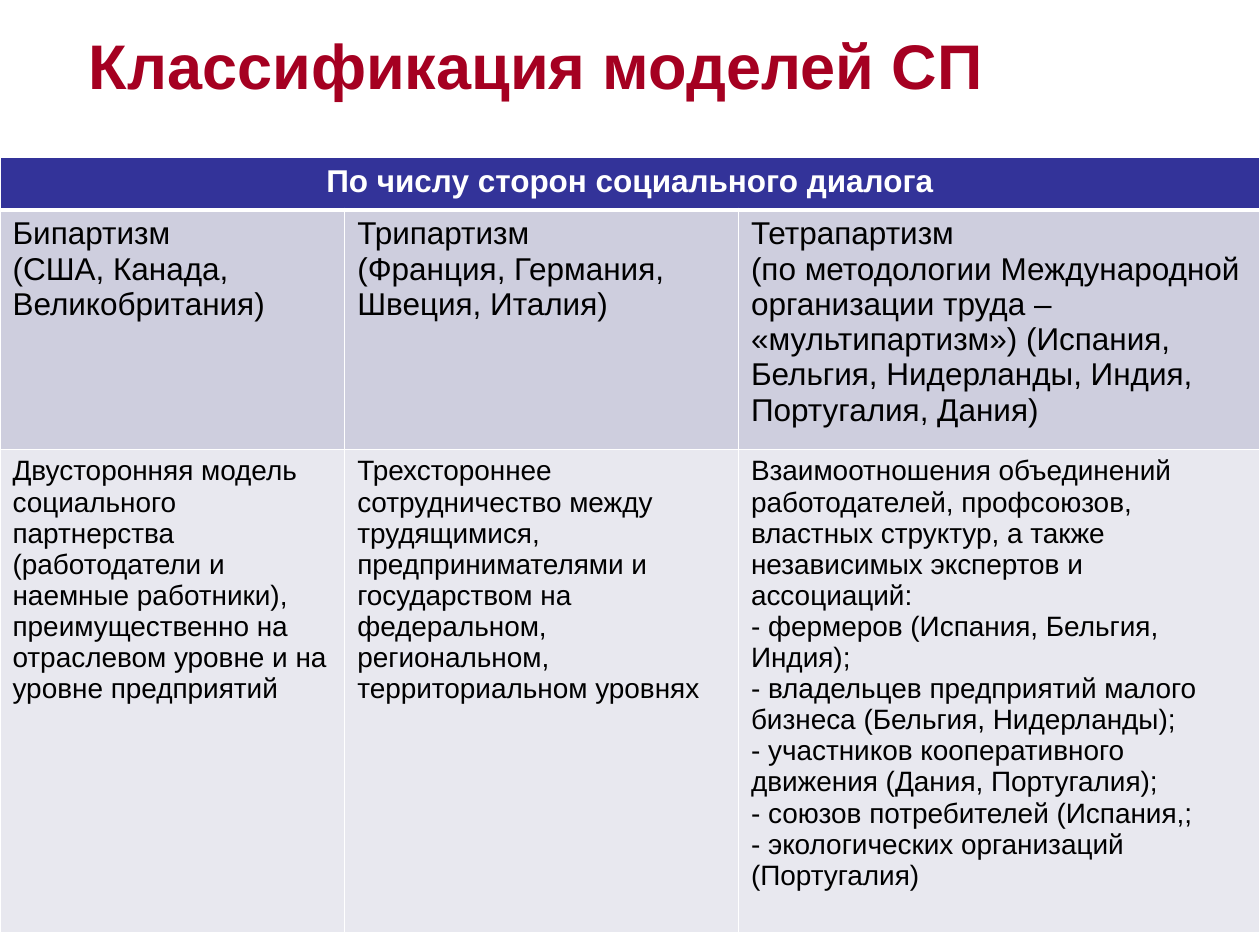
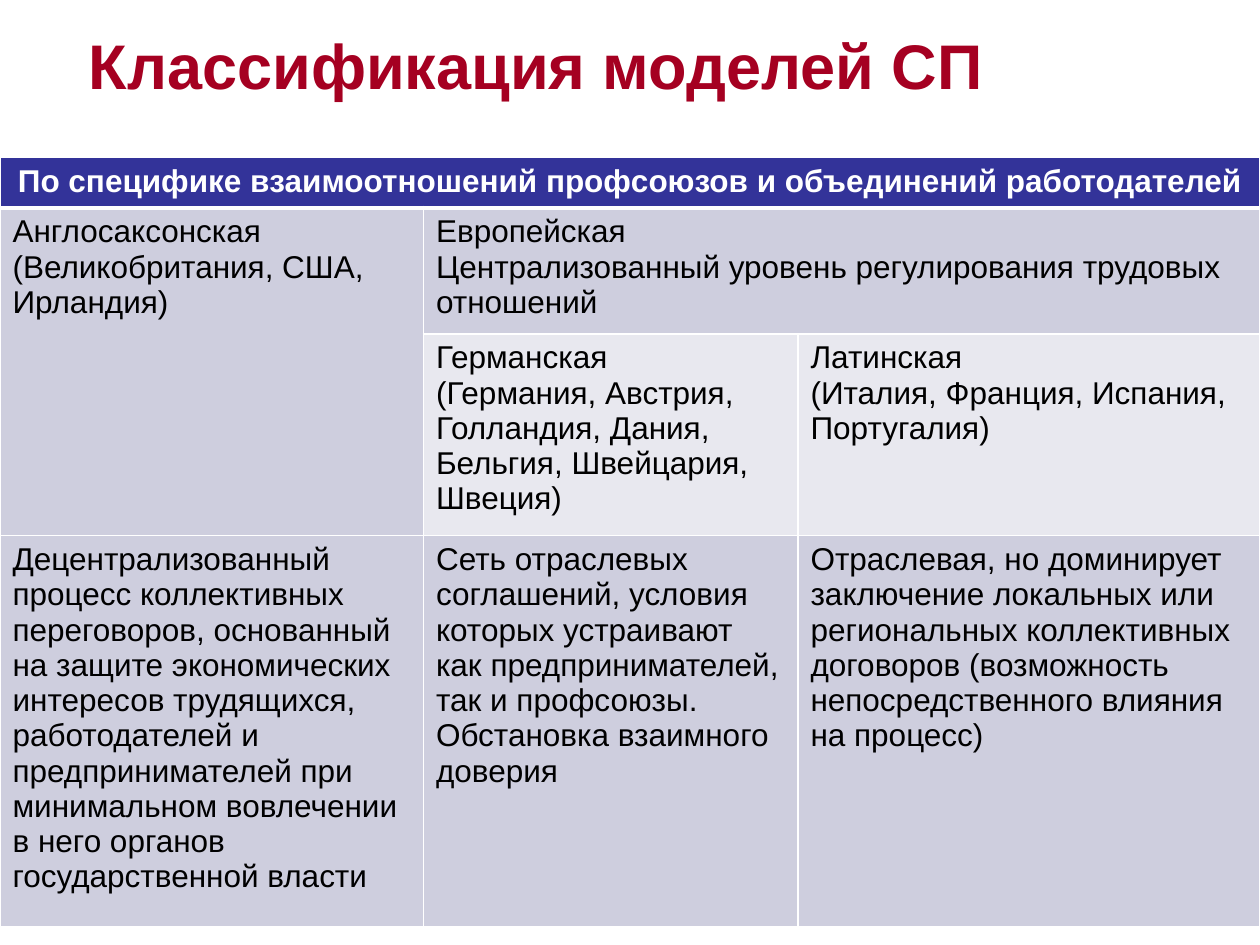
"""Build two slides that classify models of social partnership."""
from pptx import Presentation
from pptx import util as u
from pptx.dml import color
from pptx.enum import text
from pptx.oxml import ns, xmlchemy

COLORS = {
    "title": "A50021",
    "header": "333399",
    "dark_band": "CECEDE",
    "pale_band": "E8E8EF",
    "border": "FFFFFF",
    "header_text": "FFFFFF",
    "body_text": "000000",
}
FONT = "Arial"
TITLE = "Классификация моделей СП"
BODY_SIZE = 18

PARTIES = {
    "columns": [197, 225, 298],
    "rows": [30, 128.5, 256],
    "sizes": {2: 16},
    "merges": [(0, 0, 0, 2)],
    "cells": [
        ["По числу сторон социального диалога", None, None],
        [
            "Бипартизм\n(США, Канада, Великобритания)",
            "Трипартизм\n(Франция, Германия, Швеция, Италия)",
            "Тетрапартизм\n(по методологии Международной организации труда – "
            "«мультипартизм») (Испания, Бельгия, Нидерланды, Индия, Португалия, Дания)",
        ],
        [
            "Двусторонняя модель социального партнерства (работодатели и наемные "
            "работники), преимущественно на отраслевом уровне и на уровне предприятий",
            "Трехстороннее сотрудничество между трудящимися, предпринимателями и "
            "государством на федеральном, региональном, территориальном уровнях",
            "Взаимоотношения объединений работодателей, профсоюзов, властных структур, "
            "а также независимых экспертов и ассоциаций:\n"
            "- фермеров (Испания, Бельгия, Индия);\n"
            "- владельцев предприятий малого бизнеса (Бельгия, Нидерланды);\n"
            "- участников кооперативного движения (Дания, Португалия);\n"
            "- союзов потребителей (Испания,;\n"
            "- экологических организаций (Португалия)",
        ],
    ],
}

RELATIONS = {
    "columns": [242, 214, 264],
    "rows": [27, 68.4, 108, 209],
    "sizes": {},
    "merges": [(0, 0, 0, 2), (1, 0, 2, 0), (1, 1, 1, 2)],
    "cells": [
        ["По специфике взаимоотношений профсоюзов и объединений работодателей", None, None],
        [
            "Англосаксонская\n(Великобритания, США, Ирландия)",
            "Европейская\nЦентрализованный уровень регулирования трудовых отношений",
            None,
        ],
        [
            None,
            "Германская\n(Германия, Австрия, Голландия, Дания, Бельгия, Швейцария, Швеция)",
            "Латинская\n(Италия, Франция, Испания, Португалия)",
        ],
        [
            "Децентрализованный процесс коллективных переговоров, основанный на защите "
            "экономических интересов трудящихся, работодателей и предпринимателей при "
            "минимальном вовлечении в него органов государственной власти",
            "Сеть отраслевых соглашений, условия которых устраивают как предпринимателей, "
            "так и профсоюзы.\nОбстановка взаимного доверия",
            "Отраслевая, но доминирует заключение локальных или региональных коллективных "
            "договоров (возможность непосредственного влияния на процесс)",
        ],
    ],
}


def rgb(name):
    """Return the named colour."""
    return color.RGBColor.from_string(COLORS[name])


def write(frame, content, size, color_name, bold=False, centered=False):
    """Write each line of the content as a paragraph."""
    for index, line in enumerate(content.split("\n")):
        paragraph = frame.add_paragraph() if index else frame.paragraphs[0]
        paragraph.alignment = text.PP_ALIGN.CENTER if centered else text.PP_ALIGN.LEFT
        run = paragraph.add_run()
        run.text = line
        run.font.name = FONT
        run.font.size = u.Pt(size)
        run.font.bold = bold
        run.font.color.rgb = rgb(color_name)


def add_title(slide):
    """Add the shared slide title."""
    shape = slide.shapes.add_textbox(u.Pt(28), u.Pt(16.5), u.Pt(556.5), u.Pt(40.5))
    frame = shape.text_frame
    frame.word_wrap = True
    frame.vertical_anchor = text.MSO_ANCHOR.MIDDLE
    write(frame, TITLE, 36, "title", bold=True, centered=True)


def set_borders(cell, row):
    """Draw white cell borders, with a thick rule under the header."""
    properties = cell._tc.get_or_add_tcPr()
    thick_side = {0: "B", 1: "T"}.get(row)
    for side in "LRTB":
        width = u.Pt(3 if side == thick_side else 1)
        line = xmlchemy.OxmlElement(f"a:ln{side}")
        line.set("w", str(int(width)))
        fill = line.makeelement(ns.qn("a:solidFill"), {})
        fill.append(fill.makeelement(ns.qn("a:srgbClr"), {"val": COLORS["border"]}))
        line.append(fill)
        properties.append(line)


def style_cell(cell, row):
    """Give a cell its borders and the fill of its band."""
    set_borders(cell, row)
    band = "header" if row == 0 else "dark_band" if row % 2 else "pale_band"
    cell.fill.solid()
    cell.fill.fore_color.rgb = rgb(band)


def add_model_table(slide, model):
    """Add a full-width table of partnership models."""
    columns, rows, cells = model["columns"], model["rows"], model["cells"]
    shape = slide.shapes.add_table(
        len(rows), len(columns), 0, u.Pt(90), u.Pt(sum(columns)), u.Pt(sum(rows)))
    table = shape.table
    for column, width in zip(table.columns, columns):
        column.width = u.Pt(width)
    for table_row, height in zip(table.rows, rows):
        table_row.height = u.Pt(height)
    for top, left, bottom, right in model["merges"]:
        table.cell(top, left).merge(table.cell(bottom, right))
    for row, contents in enumerate(cells):
        size = model["sizes"].get(row, BODY_SIZE)
        header = row == 0
        text_color = "header_text" if header else "body_text"
        for column, content in enumerate(contents):
            cell = table.cell(row, column)
            style_cell(cell, row)
            if content:
                write(cell.text_frame, content, size, text_color, header, header)


def main():
    """Build and save the presentation."""
    presentation = Presentation()
    presentation.slide_width = u.Pt(720)
    presentation.slide_height = u.Pt(540)
    for model in (PARTIES, RELATIONS):
        slide = presentation.slides.add_slide(presentation.slide_layouts[6])
        add_title(slide)
        add_model_table(slide, model)
    presentation.save("out.pptx")


if __name__ == "__main__":
    main()
